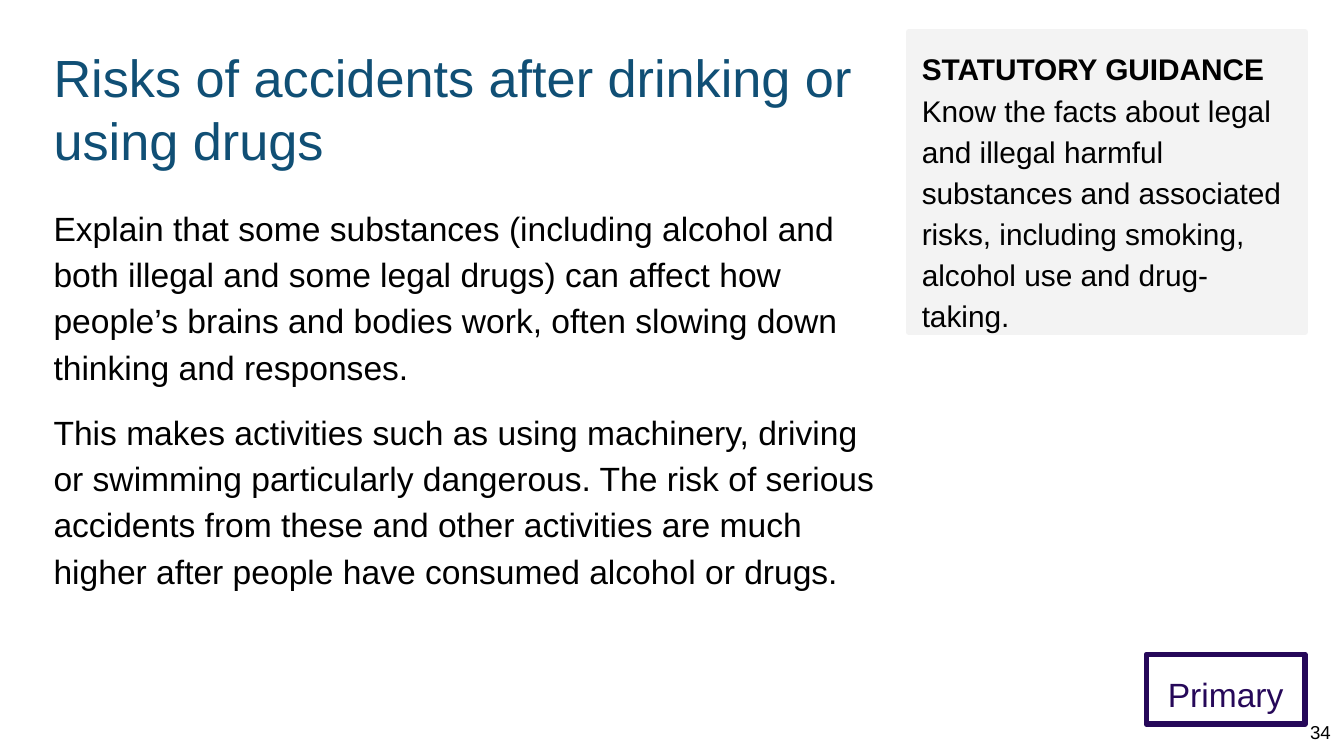
from dataclasses import dataclass

from lxml.etree import SubElement
from pptx import Presentation
from pptx.dml.color import RGBColor
from pptx.enum.shapes import MSO_SHAPE
from pptx.enum.text import MSO_ANCHOR, PP_ALIGN
from pptx.oxml.ns import qn
from pptx.util import Pt


@dataclass(frozen=True)
class Theme:
    font: str = "Arial"
    ink: str = "000000"
    blue: str = "104F75"
    purple: str = "260859"
    grey: str = "F3F3F3"
    title: int = 28
    body: int = 18
    guide: int = 16
    number: int = 10
    inset: float = 7.2
    border: int = 3
    leading: float = 1.15


THEME = Theme()

BODY = (
    "Explain that some substances (including alcohol and both illegal and "
    "some legal drugs) can affect how people’s brains and bodies work, "
    "often slowing down thinking and responses.",
    "This makes activities such as using machinery, driving or swimming "
    "particularly dangerous. The risk of serious accidents from these and "
    "other activities are much higher after people have consumed alcohol "
    "or drugs.",
)
GUIDE = (
    "Know the facts about legal and illegal harmful substances and "
    "associated risks, including smoking, alcohol use and drug-taking."
)


def add_text(shape, text, size=THEME.body, color=THEME.ink, lead="",
             align=PP_ALIGN.LEFT, anchor=MSO_ANCHOR.TOP,
             leading=THEME.leading, gap=0):
    """Fill a shape with one or more paragraphs; lead is a bold first line."""
    frame = shape.text_frame
    frame.word_wrap = True
    frame.vertical_anchor = anchor
    frame.margin_left = frame.margin_right = Pt(THEME.inset)
    frame.margin_top = frame.margin_bottom = Pt(THEME.inset)
    parts = [text] if isinstance(text, str) else text
    for index, part in enumerate(parts):
        para = frame.add_paragraph() if index else frame.paragraphs[0]
        para.alignment = align
        para.line_spacing = leading
        para.space_before = Pt(gap if index else 0)
        if lead and not index:
            add_run(para, lead, size, color, bold=True)
            para.add_line_break()
        add_run(para, part, size, color)


def add_run(para, text, size, color, bold=False):
    run = para.add_run()
    run.text = text
    run.font.name = THEME.font
    run.font.size = Pt(size)
    run.font.bold = bold
    run.font.color.rgb = RGBColor.from_string(color)


def add_area(slide, *box):
    return slide.shapes.add_textbox(*map(Pt, box))


def add_panel(slide, *box, line, fill=None):
    """Draw a bordered box with rounded line joins."""
    panel = slide.shapes.add_shape(MSO_SHAPE.RECTANGLE, *map(Pt, box))
    panel.shadow.inherit = False
    if fill:
        panel.fill.solid()
        panel.fill.fore_color.rgb = RGBColor.from_string(fill)
    else:
        panel.fill.background()
    panel.line.color.rgb = RGBColor.from_string(line)
    panel.line.width = Pt(THEME.border)
    SubElement(panel.line._get_or_add_ln(), qn("a:round"))
    return panel


def main():
    deck = Presentation()
    deck.slide_width, deck.slide_height = Pt(720), Pt(405)
    slide = deck.slides.add_slide(deck.slide_layouts[6])

    # Shared edges of the two columns
    left, top, width, right = 21.6, 17.3, 461.5, 699.1

    # Title
    add_text(add_area(slide, left, top, width, 45.4),
             "Risks of accidents after drinking or using drugs",
             size=THEME.title, color=THEME.blue, leading=1)

    # School stage tag
    tag = 85
    add_text(add_panel(slide, right - tag, 350.6, tag, 37.4,
                       line=THEME.purple),
             "Primary", color=THEME.purple, align=PP_ALIGN.CENTER)

    # Main text
    add_text(add_area(slide, left, 100.8, width, 249.8), BODY, gap=10)

    # Page number
    add_text(add_area(slide, 691.9, 378.7, 28.1, 26.6), "34",
             size=THEME.number, align=PP_ALIGN.RIGHT,
             anchor=MSO_ANCHOR.MIDDLE, leading=1)

    # Statutory guidance
    side = 212.4
    add_text(add_panel(slide, right - side, top, side, 160.6,
                       line=THEME.grey, fill=THEME.grey),
             GUIDE, lead="STATUTORY GUIDANCE", size=THEME.guide)

    deck.save("out.pptx")


if __name__ == "__main__":
    main()
